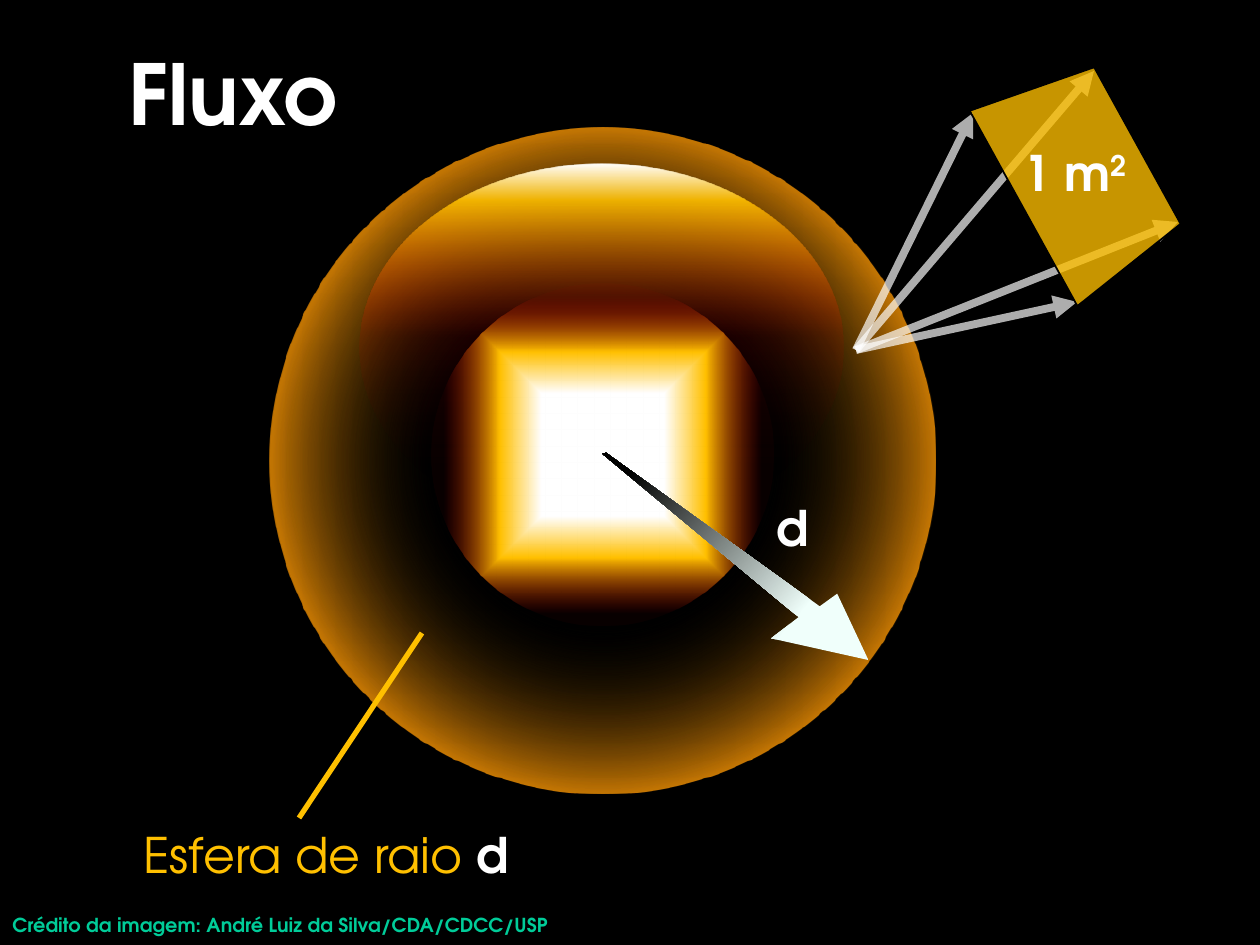
from lxml.etree import SubElement
from pptx import Presentation
from pptx.dml.color import RGBColor
from pptx.enum.shapes import MSO_CONNECTOR, MSO_SHAPE
from pptx.enum.text import MSO_ANCHOR, MSO_AUTO_SIZE, PP_ALIGN
from pptx.oxml import parse_xml
from pptx.oxml.ns import nsdecls, qn
from pptx.util import Pt

EMU_PER_PX = 914400 / 126
FONT = "TeX Gyre Adventor"
COLORS = {
    "black": "000000",
    "white": "FFFFFF",
    "gold": "FFC000",
    "orange": "EA8D04",
    "red": "C00000",
    "ice": "F0FFFB",
    "green": "00CC99",
}


def px(*lengths):
    return [round(length * EMU_PER_PX) for length in lengths]


def rgb(name):
    return RGBColor.from_string(COLORS[name])


def set_alpha(parent, percent):
    color = next(parent.iter(qn("a:srgbClr")))
    SubElement(color, qn("a:alpha")).set("val", str(percent * 1000))


def set_gradient(shape, stops, path=None):
    """Stops are (position, color, opacity); without a path it runs downwards."""
    stop_xml = "".join(
        f'<a:gs pos="{position * 1000}"><a:srgbClr val="{COLORS[color]}">'
        f'<a:alpha val="{opacity * 1000}"/></a:srgbClr></a:gs>'
        for position, color, opacity in stops
    )
    if path:
        direction = (f'<a:path path="{path}"><a:fillToRect l="50000" t="50000" '
                     'r="50000" b="50000"/></a:path>')
    else:
        direction = '<a:lin ang="5400000" scaled="0"/>'
    gradient = parse_xml(
        f'<a:gradFill {nsdecls("a")} rotWithShape="1">'
        f"<a:gsLst>{stop_xml}</a:gsLst>{direction}</a:gradFill>"
    )
    shape.fill.background()
    properties = shape._element.spPr
    properties.replace(properties.find(qn("a:noFill")), gradient)


def add_glow(shapes, box, stops, path=None):
    shape = shapes.add_shape(MSO_SHAPE.OVAL, *px(*box))
    shape.shadow.inherit = False
    shape.line.fill.background()
    set_gradient(shape, stops, path)


def add_line(shapes, start, end, color, width, opacity=100, arrow=False):
    line = shapes.add_connector(MSO_CONNECTOR.STRAIGHT, *px(*start, *end))
    line.line.color.rgb = rgb(color)
    line.line.width = Pt(width)
    properties = line._element.spPr
    outline = properties.find(qn("a:ln"))
    if opacity < 100:
        set_alpha(outline, opacity)
    if arrow:
        SubElement(outline, qn("a:tailEnd")).set("type", "triangle")
    SubElement(properties, qn("a:effectLst"))


def add_text(shapes, box, size, runs, align=PP_ALIGN.CENTER):
    """Runs are (text, color, bold, baseline percent)."""
    text_box = shapes.add_textbox(*px(*box))
    frame = text_box.text_frame
    frame.word_wrap = True
    frame.auto_size = MSO_AUTO_SIZE.SHAPE_TO_FIT_TEXT
    paragraph = frame.paragraphs[0]
    paragraph.alignment = align
    for text, color, bold, baseline in runs:
        run = paragraph.add_run()
        run.text = text
        run.font.name = FONT
        run.font.size = Pt(size)
        run.font.bold = bold
        run.font.color.rgb = rgb(color)
        if baseline:
            run._r.get_or_add_rPr().set("baseline", str(baseline * 1000))
    return text_box


def add_area(shapes):
    area = shapes.add_shape(MSO_SHAPE.TRAPEZOID, *px(969, 112, 223, 130))
    area.shadow.inherit = False
    area.adjustments[0] = 0.17
    area.rotation = 61.1
    area.fill.solid()
    area.fill.fore_color.rgb = rgb("gold")
    set_alpha(area._element.spPr, 78)
    area.line.color.rgb = rgb("black")
    area.line.width = Pt(1)


def add_radius_arrow(shapes):
    left, top = 697, 389
    points = [(0, 67), (30, 0), (77, 88), (43, 81), (47, 336), (44, 334), (21, 72)]
    corners = [(left + x, top + y) for x, y in points]
    builder = shapes.build_freeform(*corners[0], scale=EMU_PER_PX)
    builder.add_line_segments(corners[1:], close=True)
    arrow = builder.convert_to_shape()
    arrow.shadow.inherit = False
    arrow.rotation = 130.7
    arrow.line.fill.background()
    set_gradient(arrow, [(29, "ice", 100), (83, "black", 100)])


def main():
    presentation = Presentation()
    presentation.slide_width, presentation.slide_height = px(1260, 945)
    slide = presentation.slides.add_slide(presentation.slide_layouts[6])
    slide.background.fill.solid()
    slide.background.fill.fore_color.rgb = rgb("black")
    shapes = slide.shapes

    # Credit
    add_text(shapes, (0, 907, 1245, 37), 11,
             [("Crédito da imagem: André Luiz da Silva/CDA/CDCC/USP", "green", True, 0)],
             PP_ALIGN.LEFT)

    # Sphere with its highlight, and the bright source inside
    sphere = shapes.add_group_shape().shapes
    add_glow(sphere, (270, 128, 665, 665),
             [(34, "black", 0), (74, "orange", 100), (100, "gold", 100)], "circle")
    add_glow(sphere, (360, 164, 483, 368),
             [(0, "white", 100), (10, "gold", 90), (47, "red", 13), (86, "black", 2)])
    add_glow(shapes, (432, 284, 341, 341),
             [(36, "white", 100), (60, "gold", 100), (93, "red", 4)], "shape")

    # Labels of the radius and the sphere
    add_text(shapes, (747, 491, 91, 72), 28, [("d", "white", True, 0)])
    add_text(shapes, (44, 818, 564, 72), 28,
             [("Esfera de raio ", "gold", False, 0), ("d", "white", True, 0)])
    add_line(shapes, (299, 818), (422, 633), "gold", 3)

    # Rays through one square metre
    flux = shapes.add_group_shape().shapes
    for corner in [(1094, 71), (1178, 222), (1077, 302), (973, 113)]:
        add_line(flux, (856, 350), corner, "white", 4.5, opacity=67, arrow=True)
    add_area(flux)
    add_text(flux, (999, 136, 152, 72), 28,
             [("1 m", "white", True, 0), ("2", "white", True, 30)])

    # Radius
    add_radius_arrow(shapes)

    # Title
    title = add_text(shapes, (32, 37, 402, 110), 48, [("Fluxo", "white", True, 0)])
    title.text_frame.auto_size = MSO_AUTO_SIZE.NONE
    title.text_frame.vertical_anchor = MSO_ANCHOR.MIDDLE

    presentation.save("out.pptx")


if __name__ == "__main__":
    main()
